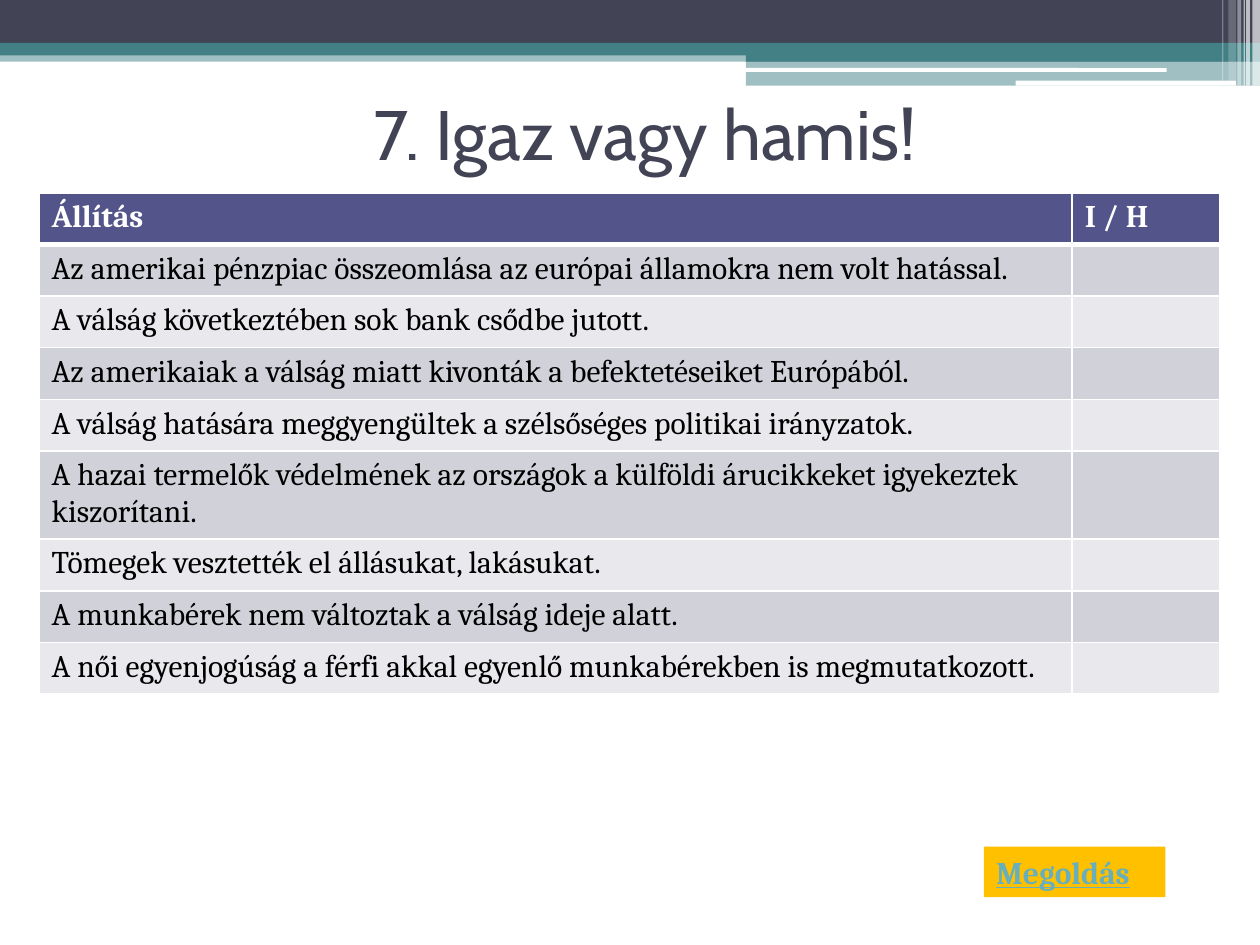
import pptx
import pptx.util
import pptx.dml.color
import pptx.enum.shapes
import pptx.enum.text
import pptx.oxml
import pptx.oxml.ns

Inches, Pt = pptx.util.Inches, pptx.util.Pt
Shape = pptx.enum.shapes.MSO_SHAPE

THEME = {
    "head_font": "Cabin", "body_font": "Cambria",
    "head_size": 40, "body_size": 18,
    "dark": "424456", "teal": "438086", "white": "FFFFFF", "black": "000000",
    "head_row": "53548A", "bands": ("D1D1DA", "E9E9ED"),
    "gold": "FFC000", "link": "67AFBD",
}

TITLE = "7. Igaz vagy hamis!"
BUTTON = "Megoldás"
HEADER = ("Állítás", "I / H")
CLAIMS = [
    "Az amerikai pénzpiac összeomlása az európai államokra nem volt hatással.",
    "A válság következtében sok bank csődbe jutott.",
    "Az amerikaiak a válság miatt kivonták a befektetéseiket Európából.",
    "A válság hatására meggyengültek a szélsőséges politikai irányzatok.",
    "A hazai termelők védelmének az országok a külföldi árucikkeket "
    "igyekeztek kiszorítani.",
    "Tömegek vesztették el állásukat, lakásukat.",
    "A munkabérek nem változtak a válság ideje alatt.",
    "A női egyenjogúság a férfi akkal egyenlő munkabérekben is megmutatkozott.",
]
COLS = (8.2, 1.17)
ROW = 0.41

# left, top, width, height, colour, opacity in percent
BANDS = [
    (0, 0.4, 10, 0.09, "teal", 50),
    (0, 0, 10, 0.34, "dark", 100),
    (0, 0.34, 10, 0.1, "teal", 100),
    (5.92, 0.39, 4.08, 0.1, "teal", 100),
    (5.92, 0.48, 4.08, 0.2, "teal", 50),
]
BARS = [(5.91, 0.54, 3.35, 0.03), (8.06, 0.64, 1.75, 0.04)]
# left, width, height, opacity in percent
STRIPES = [
    (9.94, 0.06, 0.68, 65), (9.89, 0.03, 0.68, 65), (9.87, 0.01, 0.68, 60),
    (9.82, 0.03, 0.68, 40), (9.75, 0.06, 0.64, 20), (9.7, 0.01, 0.64, 30),
]


def rgb(name):
    return pptx.dml.color.RGBColor.from_string(THEME.get(name, name))


def add_block(slide, box, color, alpha=100, kind=Shape.RECTANGLE):
    block = slide.shapes.add_shape(kind, *map(Inches, box))
    block.shadow.inherit = False
    block.line.fill.background()
    block.fill.solid()
    block.fill.fore_color.rgb = rgb(color)
    if alpha < 100:
        tint = block.fill._xPr.find(".//" + pptx.oxml.ns.qn("a:srgbClr"))
        node = pptx.oxml.parse_xml(
            f'<a:alpha {pptx.oxml.ns.nsdecls("a")} val="{alpha * 1000}"/>')
        tint.append(node)
    return block


def add_run(frame, text, color, part="body", bold=False):
    run = frame.paragraphs[0].add_run()
    run.text = text
    run.font.name = THEME[part + "_font"]
    run.font.size = Pt(THEME[part + "_size"])
    run.font.bold = bold
    run.font.color.rgb = rgb(color)
    return run


def add_edges(cell, widths):
    """Draw white cell borders; widths are points for left, right, top, bottom."""
    props = cell._tc.get_or_add_tcPr()
    for side, width in zip("LRTB", widths):
        props.append(pptx.oxml.parse_xml(
            f'<a:ln{side} {pptx.oxml.ns.nsdecls("a")} w="{Pt(width)}">'
            f'<a:solidFill><a:srgbClr val="{THEME["white"]}"/></a:solidFill>'
            f'</a:ln{side}>'))


def add_top(slide):
    for *box, color, alpha in BANDS:
        add_block(slide, box, color, alpha)
    for box in BARS:
        add_block(slide, box, "white", kind=Shape.ROUNDED_RECTANGLE)
    for left, width, height, alpha in STRIPES:
        add_block(slide, (left, 0, width, height), "white", alpha)


def add_title(slide):
    box = slide.shapes.add_textbox(*map(Inches, (0.62, 0.47, 9, 1.17)))
    frame = box.text_frame
    frame.word_wrap = True
    frame.vertical_anchor = pptx.enum.text.MSO_ANCHOR.MIDDLE
    frame.paragraphs[0].alignment = pptx.enum.text.PP_ALIGN.CENTER
    add_run(frame, TITLE, "dark", "head")


def add_button(slide):
    frame = add_block(slide, (7.81, 6.72, 1.44, 0.4), "gold").text_frame
    frame.word_wrap = True
    frame.vertical_anchor = pptx.enum.text.MSO_ANCHOR.TOP
    frame.paragraphs[0].alignment = pptx.enum.text.PP_ALIGN.LEFT
    add_run(frame, BUTTON, "link", bold=True).font.underline = True


def add_claims(slide):
    rows = [HEADER] + [(claim, "") for claim in CLAIMS]
    size = (0.31, 1.53, sum(COLS), ROW * len(rows))
    table = slide.shapes.add_table(
        len(rows), len(COLS), *map(Inches, size)).table
    for col, width in zip(table.columns, COLS):
        col.width = Inches(width)
    for r, row in enumerate(rows):
        head = r == 0
        fill = "head_row" if head else THEME["bands"][(r - 1) % 2]
        edges = (1, 1, 3 if r == 1 else 1, 3 if head else 1)
        for c, text in enumerate(row):
            cell = table.cell(r, c)
            add_edges(cell, edges)
            cell.fill.solid()
            cell.fill.fore_color.rgb = rgb(fill)
            if text:
                add_run(cell.text_frame, text,
                        "white" if head else "black", bold=head)


def main():
    deck = pptx.Presentation()
    deck.slide_width, deck.slide_height = Inches(10), Inches(7.5)
    slide = deck.slides.add_slide(deck.slide_layouts[6])
    add_top(slide)
    add_title(slide)
    add_button(slide)
    add_claims(slide)
    deck.save("out.pptx")


if __name__ == "__main__":
    main()
